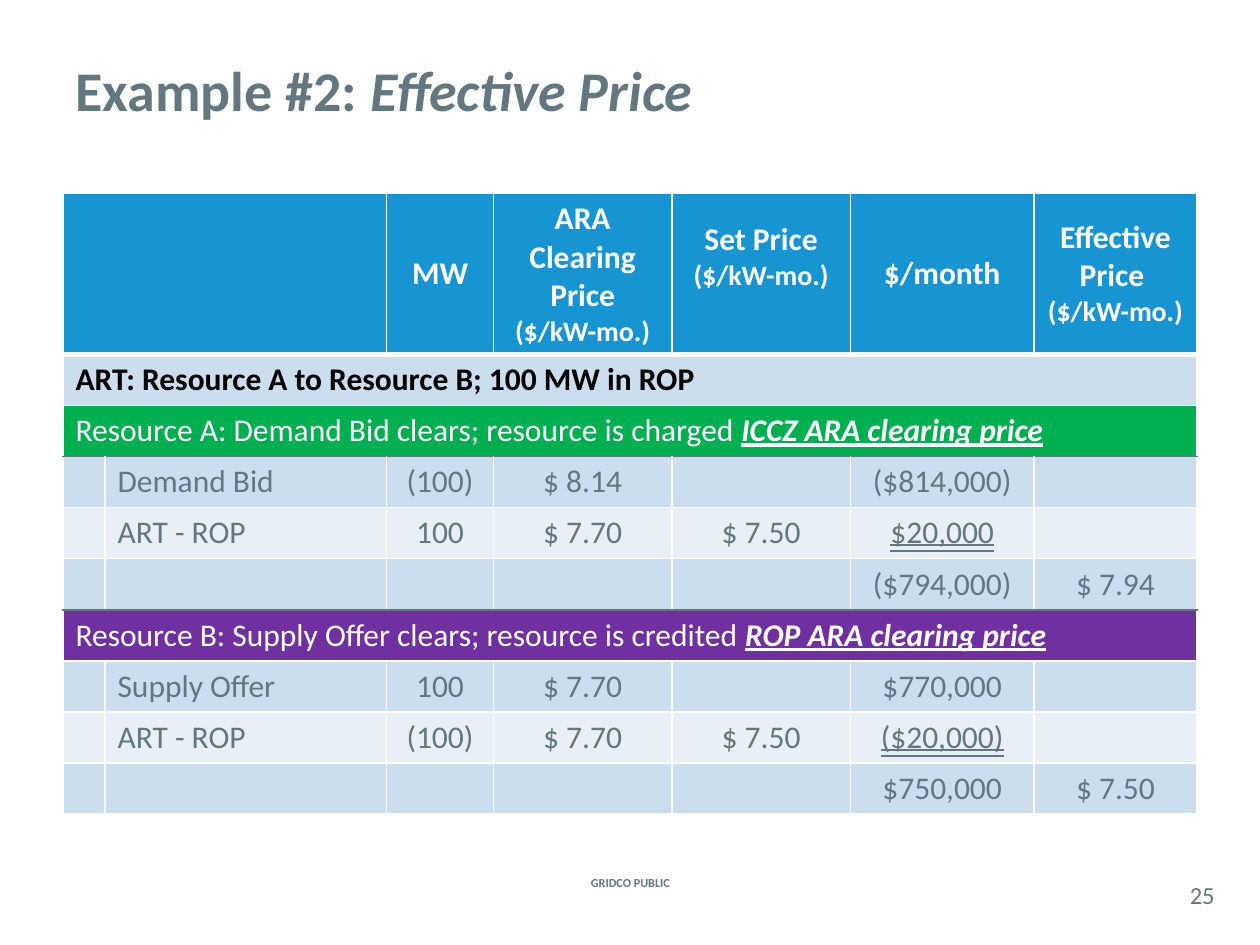
from lxml import etree
from pptx import Presentation
from pptx import util as u
from pptx.dml.color import RGBColor
from pptx.enum import text
from pptx.oxml import ns

Pt = u.Pt
WHITE = RGBColor(0xFF, 0xFF, 0xFF)
BLACK = RGBColor(0, 0, 0)
SLATE = RGBColor(0x62, 0x77, 0x7F)
BLUE = RGBColor(0x17, 0x95, 0xD2)
GREEN = RGBColor(0x00, 0xB0, 0x50)
PURPLE = RGBColor(0x70, 0x30, 0xA0)
BAND_DARK = RGBColor(0xCC, 0xDD, 0xEE)
BAND_LIGHT = RGBColor(0xE8, 0xEF, 0xF7)
CENTER = text.PP_ALIGN.CENTER
LEFT = text.PP_ALIGN.LEFT
MIDDLE = text.MSO_ANCHOR.MIDDLE
DOUBLE = text.MSO_UNDERLINE.DOUBLE_LINE

HEADER_HEIGHT, ROW_HEIGHT = 92, 29.2
COLUMN_WIDTHS = [24, 161, 61, 102, 102, 105, 93]
THIN_WHITE, THICK_WHITE, THIN_SLATE = (WHITE, 1), (WHITE, 3), (SLATE, 1)
UNIT = "($/kW-mo.)"

HEADERS = {
    2: [("MW", 18)],
    3: [("ARA Clearing Price", 18), (UNIT, 16)],
    4: [("Set Price", 18), (UNIT, 16)],
    5: [("$/month", 18)],
    6: [("Effective Price ", 18), (UNIT, 16)],
}
# Row index: fill, text colour, plain text, bold text, emphasised text
BANNERS = {
    1: (BAND_DARK, BLACK, "", "ART: Resource A to Resource B; 100 MW in ROP", ""),
    2: (GREEN, WHITE, "Resource A: Demand Bid clears; resource is charged ", "",
        "ICCZ ARA clearing price"),
    6: (PURPLE, WHITE, "Resource B: Supply Offer clears; resource is credited ", "",
        "ROP ARA clearing price"),
}
DETAILS = {
    3: ["", "Demand Bid", "(100)", "$ 8.14", "", "($814,000)", ""],
    4: ["", "ART - ROP", "100", "$ 7.70", "$ 7.50", "$20,000", ""],
    5: ["", "", "", "", "", "($794,000)", "$ 7.94"],
    7: ["", "Supply Offer", "100", "$ 7.70", "", "$770,000", ""],
    8: ["", "ART - ROP", "(100)", "$ 7.70", "$ 7.50", "($20,000)", ""],
    9: ["", "", "", "", "", "$750,000", "$ 7.50"],
}
LIGHT_ROWS = (4, 8)
# Horizontal rules by the row they lie above; all others are thin white
RULES = {1: THICK_WHITE, 3: THIN_SLATE, 6: THIN_SLATE}


class SlideBuilder:
    font_name = "Calibri"

    def __init__(self, slide):
        self.slide = slide

    def style(self, font, size, color, bold=False, italic=False, underline=False):
        font.name, font.size = self.font_name, Pt(size)
        font.bold, font.italic, font.underline = bold, italic, underline
        font.color.rgb = color

    def add_runs(self, paragraph, runs, align=LEFT):
        """Fill a paragraph with (text, style arguments) runs."""
        paragraph.alignment = align
        if len(runs) == 1:
            self.style(paragraph.font, **runs[0][1])
        for words, look in runs:
            run = paragraph.add_run()
            run.text = words
            if len(runs) > 1:
                self.style(run.font, **look)

    def label(self, box, runs, align=LEFT, inset=None):
        frame = self.slide.shapes.add_textbox(*map(Pt, box)).text_frame
        frame.word_wrap = True
        frame.vertical_anchor = MIDDLE
        if inset is not None:
            frame.margin_left = frame.margin_right = Pt(inset)
            frame.margin_top = frame.margin_bottom = Pt(inset)
        self.add_runs(frame.paragraphs[0], runs, align)

    def table(self, left, top, widths, heights):
        table = self.slide.shapes.add_table(
            len(heights), len(widths), Pt(left), Pt(top),
            Pt(sum(widths)), Pt(sum(heights))).table
        for column, width in zip(table.columns, widths):
            column.width = Pt(width)
        for row, height in zip(table.rows, heights):
            row.height = Pt(height)
        return table

    def cell(self, cell, fill, paragraphs=(), align=LEFT):
        cell.fill.solid()
        cell.fill.fore_color.rgb = fill
        frame = cell.text_frame
        for index, runs in enumerate(paragraphs):
            paragraph = frame.add_paragraph() if index else frame.paragraphs[0]
            self.add_runs(paragraph, runs, align)

    def borders(self, cell, above, below):
        properties = cell._tc.get_or_add_tcPr()
        sides = [("a:lnL", THIN_WHITE), ("a:lnR", THIN_WHITE),
                 ("a:lnT", above), ("a:lnB", below)]
        for index, (tag, (color, width)) in enumerate(sides):
            line = etree.Element(ns.qn(tag), w=str(Pt(width)))
            fill = etree.SubElement(line, ns.qn("a:solidFill"))
            etree.SubElement(fill, ns.qn("a:srgbClr"), val=str(color))
            properties.insert(index, line)


def fill_header(builder, table):
    table.cell(0, 0).merge(table.cell(0, 1))
    for column in range(len(COLUMN_WIDTHS)):
        cell = table.cell(0, column)
        lines = [[(words, dict(size=size, color=WHITE, bold=True))]
                 for words, size in HEADERS.get(column, [])]
        builder.cell(cell, BLUE, lines, CENTER)
        cell.vertical_anchor = MIDDLE
    table.cell(0, 4).margin_bottom = Pt(23)


def fill_banners(builder, table):
    for row, (fill, color, plain, bold, emphasis) in BANNERS.items():
        cell = table.cell(row, 0)
        cell.merge(table.cell(row, len(COLUMN_WIDTHS) - 1))
        base = dict(size=18, color=color)
        runs = [(plain, base), (bold, dict(base, bold=True)),
                (emphasis, dict(base, bold=True, italic=True, underline=True))]
        builder.cell(cell, fill, [[run for run in runs if run[0]]])


def fill_details(builder, table):
    for row, values in DETAILS.items():
        light = row in LIGHT_ROWS
        for column, value in enumerate(values):
            look = dict(size=18, color=SLATE,
                        underline=DOUBLE if light and column == 5 else False)
            builder.cell(table.cell(row, column), BAND_LIGHT if light else BAND_DARK,
                         [[(value, look)]] if value else [],
                         CENTER if column > 1 else LEFT)


def main():
    presentation = Presentation()
    presentation.slide_width, presentation.slide_height = Pt(720), Pt(540)
    builder = SlideBuilder(presentation.slides.add_slide(presentation.slide_layouts[6]))

    title = dict(size=32, color=SLATE, bold=True)
    builder.label((36, 6, 648, 90), [("Example #2: ", title),
                                     ("Effective Price", dict(title, italic=True))])

    heights = [HEADER_HEIGHT] + [ROW_HEIGHT] * 9
    table = builder.table(36, 110.5, COLUMN_WIDTHS, heights)
    fill_header(builder, table)
    fill_banners(builder, table)
    fill_details(builder, table)
    for row in range(len(heights)):
        for column in range(len(COLUMN_WIDTHS)):
            cell = table.cell(row, column)
            if not cell.is_spanned:
                builder.borders(cell, RULES.get(row, THIN_WHITE),
                                RULES.get(row + 1, THIN_WHITE))

    builder.label((307.5, 498.5, 105.5, 12),
                  [("GRIDCO PUBLIC", dict(size=7, color=SLATE, bold=True))], CENTER)
    builder.label((672, 501, 30, 21), [("25", dict(size=14, color=SLATE))], CENTER, inset=0)
    presentation.save("out.pptx")


if __name__ == "__main__":
    main()
